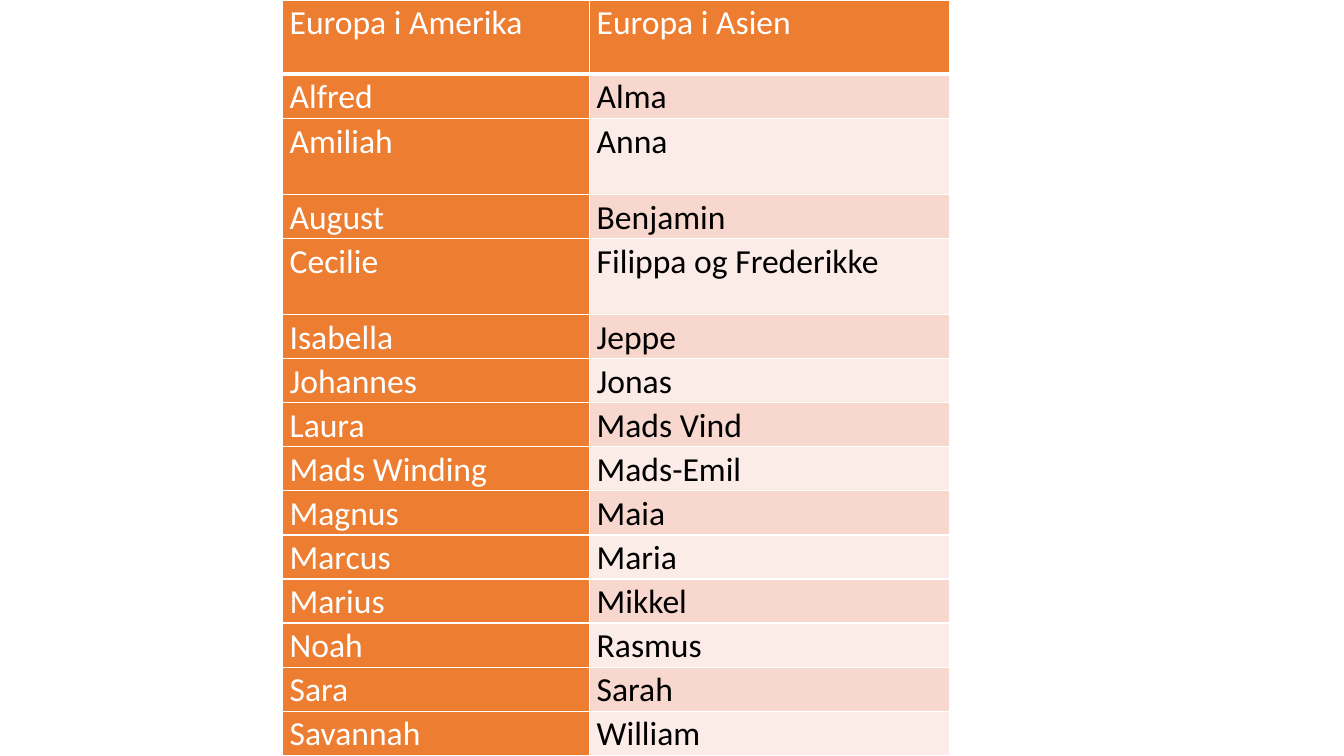
from pptx import Presentation
from pptx.dml.color import RGBColor
from pptx.oxml import parse_xml
from pptx.oxml.ns import nsdecls
from pptx.util import Cm, Pt

ORANGE = RGBColor(0xED, 0x7D, 0x31)
ROSE = RGBColor(0xF8, 0xD7, 0xCE)
PALE_ROSE = RGBColor(0xFC, 0xEC, 0xE8)
WHITE = RGBColor(0xFF, 0xFF, 0xFF)
BLACK = RGBColor(0x00, 0x00, 0x00)

GROUPS = [
    ("Europa i Amerika", "Europa i Asien"),
    ("Alfred", "Alma"),
    ("Amiliah", "Anna"),
    ("August", "Benjamin"),
    ("Cecilie", "Filippa og Frederikke"),
    ("Isabella", "Jeppe"),
    ("Johannes", "Jonas"),
    ("Laura", "Mads Vind"),
    ("Mads Winding", "Mads-Emil"),
    ("Magnus", "Maia"),
    ("Marcus", "Maria"),
    ("Marius", "Mikkel"),
    ("Noah", "Rasmus"),
    ("Sara", "Sarah"),
    ("Savannah", "William"),
]
COLUMN_SHARES = (0.46, 0.54)
ROW_HEIGHT = Cm(1.11)
TALL_ROWS = {0: Cm(1.87), 2: Cm(1.92), 4: Cm(1.92)}


def add_borders(cell, is_header):
    """Draw white cell borders, heavier below the header."""
    properties = cell._tc.get_or_add_tcPr()
    for side in ("L", "R", "T", "B"):
        width = Pt(3) if is_header and side == "B" else Pt(1)
        properties.append(parse_xml(
            f'<a:ln{side} {nsdecls("a")} w="{width}"><a:solidFill>'
            f'<a:srgbClr val="{WHITE}"/></a:solidFill></a:ln{side}>'))


def format_cell(cell, text, fill, color, is_header):
    add_borders(cell, is_header)
    cell.fill.solid()
    cell.fill.fore_color.rgb = fill
    cell.margin_left = cell.margin_right = Cm(0.19)
    cell.margin_top = cell.margin_bottom = 0
    cell.text_frame.text = text
    paragraph = cell.text_frame.paragraphs[0]
    paragraph.line_spacing = 1.07
    font = paragraph.runs[0].font
    font.name = "Calibri"
    font.size = Pt(24)
    font.bold = False
    font.color.rgb = color


def add_group_table(slide, left, top, width, height):
    shape = slide.shapes.add_table(
        len(GROUPS), len(COLUMN_SHARES), left, top, width, height)
    table = shape.table
    table.first_col = True
    for column, share in zip(table.columns, COLUMN_SHARES):
        column.width = int(width * share)

    for row_index, names in enumerate(GROUPS):
        table.rows[row_index].height = TALL_ROWS.get(row_index, ROW_HEIGHT)
        is_header = row_index == 0
        for column_index, name in enumerate(names):
            # Header and first column are solid, the rest is banded
            if is_header or column_index == 0:
                fill, color = ORANGE, WHITE
            else:
                fill, color = (ROSE if row_index % 2 else PALE_ROSE), BLACK
            cell = table.cell(row_index, column_index)
            format_cell(cell, name, fill, color, is_header)


def main():
    presentation = Presentation()
    presentation.slide_width = Cm(33.87)
    presentation.slide_height = Cm(19.05)
    # Blank layout: the slide has no title
    slide = presentation.slides.add_slide(presentation.slide_layouts[6])
    add_group_table(slide, Cm(7.11), 0, Cm(16.82), presentation.slide_height)
    presentation.save("out.pptx")


if __name__ == "__main__":
    main()
